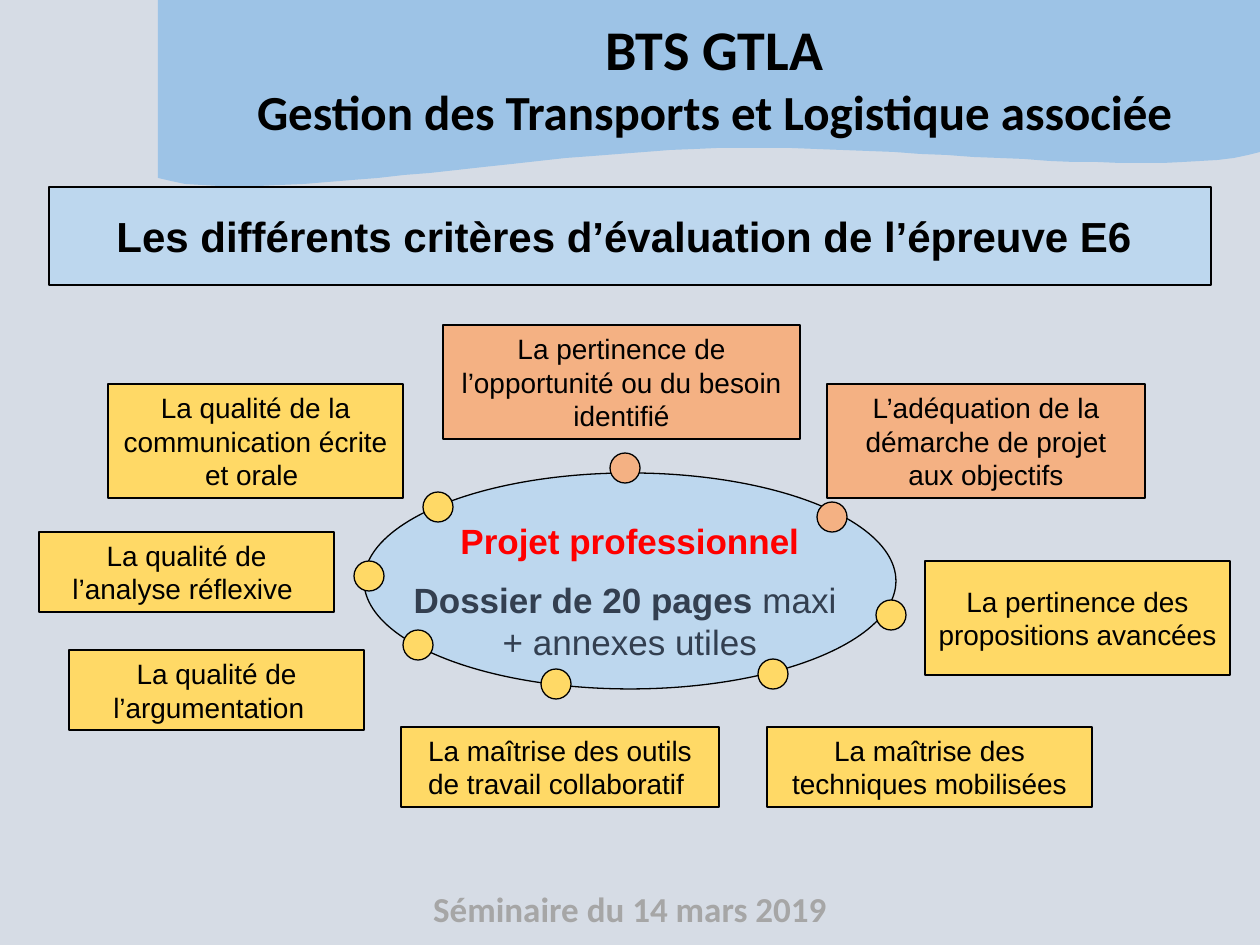
from pptx import Presentation
from pptx import util as u
from pptx.dml.color import RGBColor
from pptx.enum import shapes, text

EMU_PER_PX = 914400 / 126
COLORS = {
    "background": "D6DCE5", "wave": "9DC3E6", "panel": "BDD7EE",
    "yellow": "FFD966", "orange": "F4B183", "black": "000000",
    "red": "FF0000", "slate": "333F50", "grey": "A6A6A6",
}
DOT = 30


def px(*lengths):
    return [u.Emu(round(length * EMU_PER_PX)) for length in lengths]


def style(shape, fill, paragraphs=()):
    """Fill and outline a shape, then write (text, size, color, bold) paragraphs."""
    shape.fill.solid()
    shape.fill.fore_color.rgb = RGBColor.from_string(COLORS[fill])
    shape.line.color.rgb = RGBColor.from_string(COLORS["black"])
    shape.line.width = u.Pt(0.75)
    frame = shape.text_frame
    frame.vertical_anchor = text.MSO_ANCHOR.MIDDLE
    for i, (words, size, color, bold) in enumerate(paragraphs):
        line = frame.add_paragraph() if i else frame.paragraphs[0]
        line.text = words
        line.alignment = text.PP_ALIGN.CENTER
        line.font.name = "Arial"
        line.font.size = u.Pt(size)
        line.font.bold = bold
        line.font.color.rgb = RGBColor.from_string(COLORS[color])


prs = Presentation()
prs.slide_width, prs.slide_height = px(1260, 945)
slide = prs.slides.add_slide(prs.slide_layouts[5])
slide.background.fill.solid()
slide.background.fill.fore_color.rgb = RGBColor.from_string(COLORS["background"])

# Header wave: two Bézier curves along its lower edge
curves = [
    [(1260, 152), (1170, 181), (902, 144), (718, 148)],
    [(718, 148), (534, 152), (251, 207), (158, 178)],
]
STEPS = 24
edge = [(1260, 0)]
for curve in curves:
    for step in range(STEPS + 1):
        t = step / STEPS
        weights = ((1 - t) ** 3, 3 * t * (1 - t) ** 2, 3 * t ** 2 * (1 - t), t ** 3)
        edge.append(tuple(sum(w * point[axis] for w, point in zip(weights, curve))
                          for axis in (0, 1)))
builder = slide.shapes.build_freeform(158, 0, scale=EMU_PER_PX)
builder.add_line_segments(edge, close=True)
wave = builder.convert_to_shape()
wave.shadow.inherit = False
style(wave, "wave")
wave.line.fill.background()

# Header and footer
captions = [
    ((237, 8, 955, 140), "black",
     [("BTS GTLA", 32), ("Gestion des Transports et Logistique associée", 28)]),
    ((315, 881, 630, 55), "grey", [("Séminaire du 14 mars 2019", 20)]),
]
for place, color, lines in captions:
    frame = slide.shapes.add_textbox(*px(*place)).text_frame
    frame.word_wrap = True
    for i, (words, size) in enumerate(lines):
        line = frame.add_paragraph() if i else frame.paragraphs[0]
        line.text = words
        line.alignment = text.PP_ALIGN.CENTER
        line.font.name = "Calibri"
        line.font.size = u.Pt(size)
        line.font.bold = True
        line.font.color.rgb = RGBColor.from_string(COLORS[color])

# Banner
banner = slide.shapes.title
banner.left, banner.top, banner.width, banner.height = px(49, 187, 1162, 98)
banner.text_frame.word_wrap = False
banner.text_frame.auto_size = text.MSO_AUTO_SIZE.NONE
style(banner, "panel",
      [("Les différents critères d’évaluation de l’épreuve E6 ", 24, "black", True)])

# Central project
project = slide.shapes.add_shape(shapes.MSO_SHAPE.OVAL, *px(364, 473, 532, 216))
project.shadow.inherit = False
project.text_frame.word_wrap = False
project.text_frame.margin_top, project.text_frame.margin_bottom = px(20, 0)
style(project, "panel", [
    ("Projet professionnel", 20, "red", True),
    ("", 20, "slate", None),
    ("+ annexes utiles", 20, "slate", False),
])
dossier = project.text_frame.paragraphs[1]
dossier.space_before = u.Pt(10)
for words, bold in (("Dossier de 20 pages ", True), ("maxi ", False)):
    run = dossier.add_run()
    run.text = words
    run.font.bold = bold

# Criteria: color, dot corner, box, wording
criteria = [
    ("yellow", (758, 659), (767, 727, 325, 80), "La maîtrise des techniques mobilisées"),
    ("orange", (610, 453), (443, 325, 357, 114),
     "La pertinence de l’opportunité ou du besoin identifié"),
    ("orange", (817, 502), (827, 384, 318, 114),
     "L’adéquation de la démarche de projet aux objectifs"),
    ("yellow", (541, 669), (401, 727, 318, 80),
     "La maîtrise des outils de travail collaboratif "),
    ("yellow", (876, 600), (925, 561, 305, 114),
     "La pertinence des propositions avancées "),
    ("yellow", (403, 630), (69, 650, 295, 80), "La qualité de l’argumentation  "),
    ("yellow", (354, 561), (39, 532, 295, 80), "La qualité de l’analyse réflexive "),
    ("yellow", (423, 492), (108, 384, 295, 114),
     "La qualité de la communication écrite et orale "),
]
for color, corner, place, words in criteria:
    group = slide.shapes.add_group_shape()
    dot = group.shapes.add_shape(shapes.MSO_SHAPE.OVAL, *px(*corner, DOT, DOT))
    box = group.shapes.add_shape(shapes.MSO_SHAPE.RECTANGLE, *px(*place))
    dot.shadow.inherit = box.shadow.inherit = False
    box.text_frame.word_wrap = True
    style(dot, color)
    style(box, color, [(words, 16, "black", False)])

prs.save("out.pptx")
